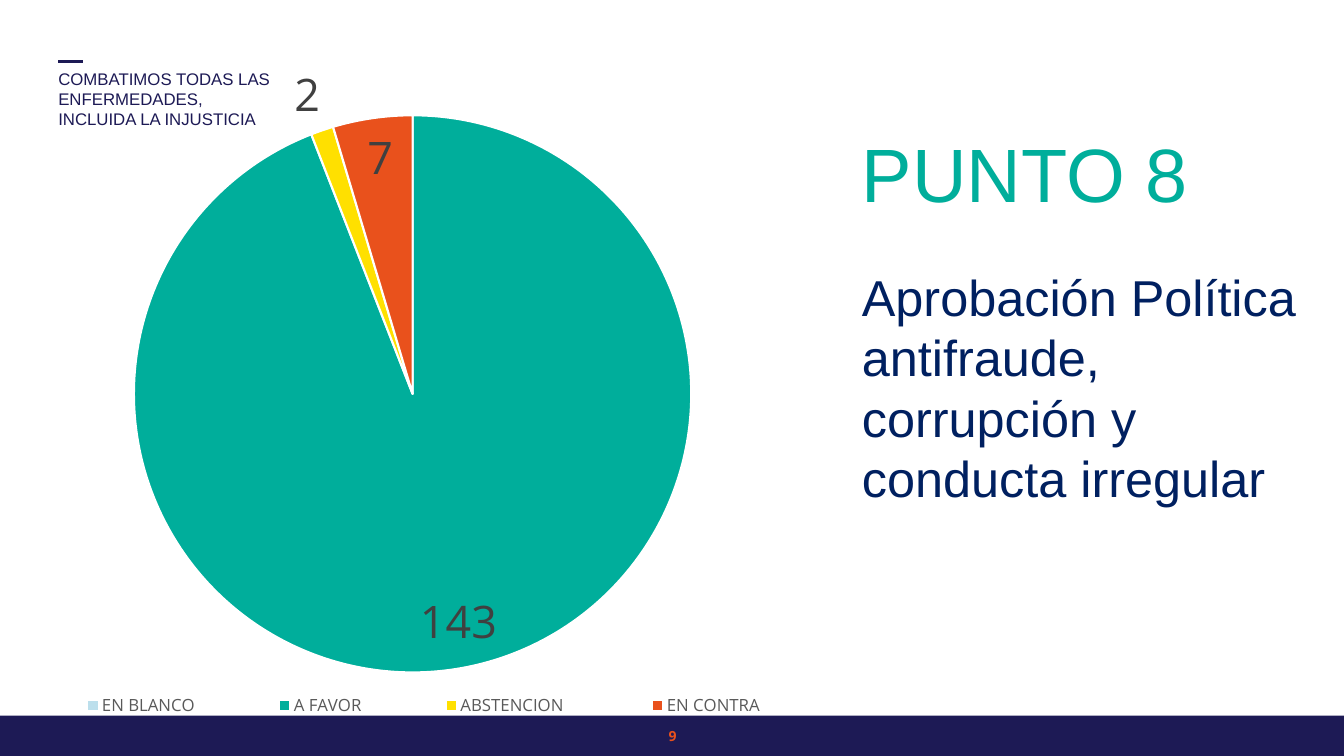
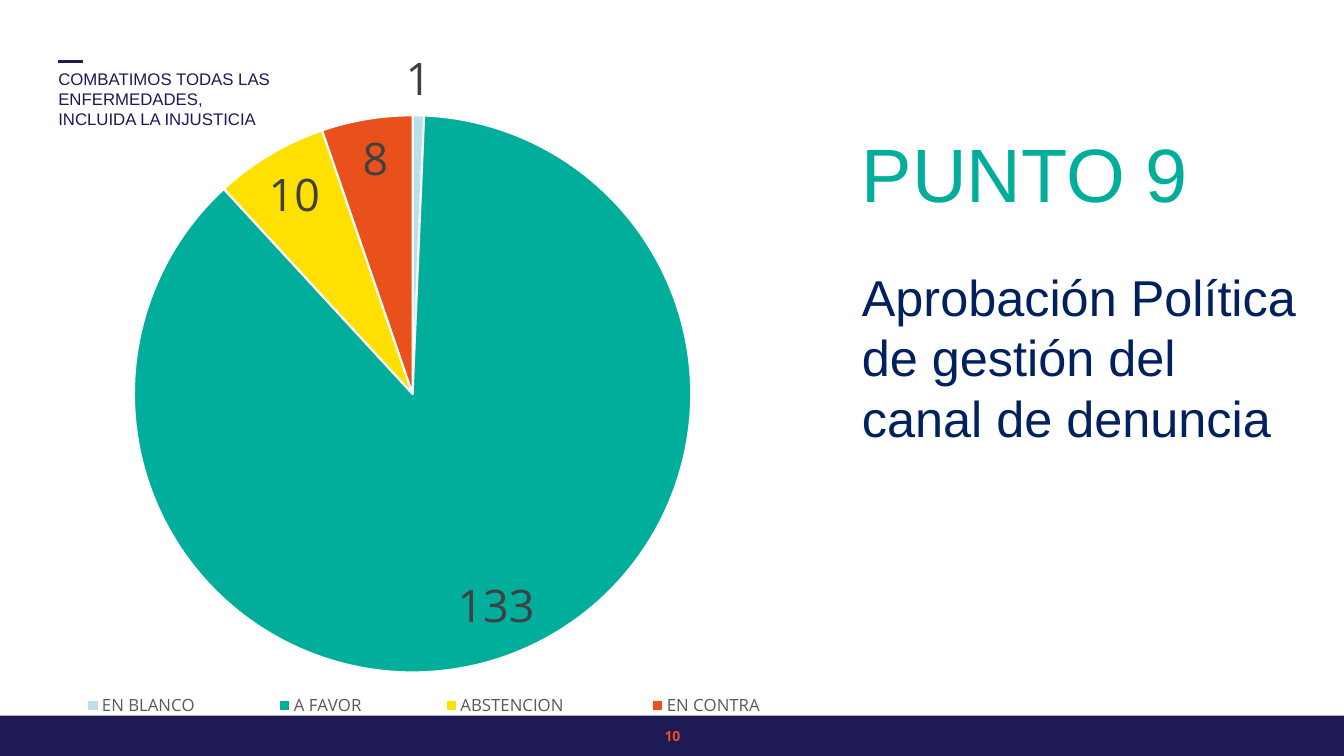
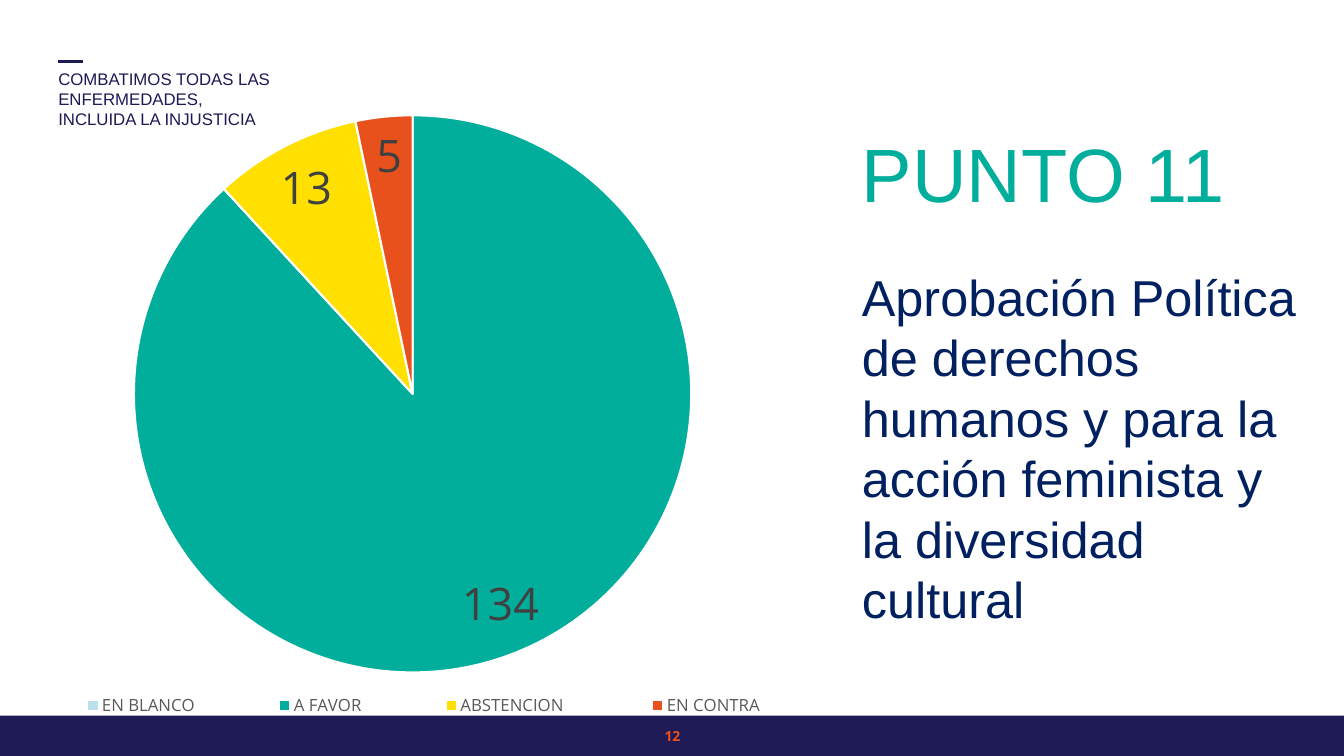
from lxml import etree
from pptx import Presentation
from pptx import util as u
from pptx.chart.data import CategoryChartData
from pptx.dml.color import RGBColor
from pptx.enum import chart as charts, shapes, text
from pptx.oxml import parse_xml
from pptx.oxml.ns import nsdecls, qn

COLORS = {
    "navy": "1D1A55", "body": "002060", "teal": "00AE9B", "orange": "E9511C",
    "yellow": "FFE000", "sky": "BCDFEC", "white": "FFFFFF",
    "label": "404040", "legend": "595959", "black": "000000",
}
HEADING_FONT, CHART_FONT = "Arial", "Open Sans"
MOTTO = "COMBATIMOS TODAS LAS ENFERMEDADES, \vINCLUIDA LA INJUSTICIA"
ANSWERS = [("EN BLANCO", "sky"), ("A FAVOR", "teal"),
           ("ABSTENCION ", "yellow"), ("EN CONTRA", "orange")]

# page number, title, subject, votes in the order of ANSWERS, subject height
VOTES = [
    (9, "PUNTO 8", "Aprobación Política antifraude, corrupción y conducta irregular",
     (0, 143, 2, 7), 2.52),
    (10, "PUNTO 9", "Aprobación Política de gestión del canal de denuncia",
     (1, 133, 10, 8), 2.52),
    (12, "PUNTO 11", "Aprobación Política de derechos humanos y para la acción "
     "feminista y la diversidad cultural", (0, 134, 13, 5), 3.74),
]
PLOT_AREA = {"x": 0.137, "y": 0.143, "w": 0.67, "h": 0.691}
LEGEND_AREA = {"x": 0.01, "y": 0.855, "w": 0.95, "h": 0.04}


def rgb(name):
    return RGBColor.from_string(COLORS[name])


def style(font, size, color, name, bold=False):
    font.size, font.name, font.bold = u.Pt(size), name, bold
    font.color.rgb = rgb(color)


def add_text(slide, box, content, size, color, font=HEADING_FONT, bold=False,
             align=text.PP_ALIGN.LEFT, anchor=text.MSO_ANCHOR.TOP):
    frame = slide.shapes.add_textbox(*map(u.Inches, box)).text_frame
    frame.word_wrap = True
    frame.vertical_anchor = anchor
    frame.text = content
    paragraph = frame.paragraphs[0]
    paragraph.alignment = align
    for run in paragraph.runs:
        style(run.font, size, color, font, bold)


def add_frame(slide, page):
    """Add the bottom band, motto, short rule and page number."""
    band = slide.shapes.add_shape(shapes.MSO_SHAPE.RECTANGLE, 0, u.Inches(7.1),
                                  u.Inches(13.33), u.Inches(0.4))
    band.shadow.inherit = False
    band.fill.solid()
    band.fill.fore_color.rgb = rgb("navy")
    band.line.fill.background()
    add_text(slide, (0.48, 0.63, 2.83, 0.71), MOTTO, 12, "navy")
    rule = slide.shapes.add_connector(
        shapes.MSO_CONNECTOR.STRAIGHT, *map(u.Inches, (0.58, 0.61, 0.82, 0.61)))
    rule.line.color.rgb = rgb("navy")
    rule.line.width = u.Pt(1.5)
    etree.SubElement(rule._element.spPr, qn("a:effectLst"))
    add_text(slide, (6.12, 7.17, 1.1, 0.27), str(page), 10, "orange", CHART_FONT,
             True, text.PP_ALIGN.CENTER, text.MSO_ANCHOR.MIDDLE)


def manual_layout(area, inner=False):
    target = '<c:layoutTarget val="inner"/>' if inner else ""
    modes = "".join(f'<c:{key}Mode val="edge"/>' for key in "xy")
    sizes = "".join(f'<c:{key} val="{value}"/>' for key, value in area.items())
    return parse_xml(f'<c:layout {nsdecls("c")}><c:manualLayout>{target}{modes}{sizes}'
                     '</c:manualLayout></c:layout>')


def set_layout(parent, layout, position):
    for old in parent.findall(qn("c:layout")):
        parent.remove(old)
    parent.insert(position, layout)


def add_pie(slide, votes):
    data = CategoryChartData()
    data.categories = [answer for answer, _ in ANSWERS]
    data.add_series("Series 1", votes)
    chart = slide.shapes.add_chart(charts.XL_CHART_TYPE.PIE, 0, 0, u.Inches(8.67),
                                   u.Inches(8), data).chart
    chart.has_title = False
    style(chart.font, 10, "black", CHART_FONT)

    chart.has_legend = True
    legend = chart.legend
    legend.position = charts.XL_LEGEND_POSITION.LEFT
    legend.include_in_layout = False
    style(legend.font, 12, "legend", CHART_FONT)
    set_layout(legend._element, manual_layout(LEGEND_AREA), 1)

    plot = chart.plots[0]
    plot.vary_by_categories = True
    set_layout(plot._element.getparent(), manual_layout(PLOT_AREA, inner=True), 0)
    series = plot.series[0]
    for index, (_, color) in enumerate(ANSWERS):
        wedge = series.points[index].format
        wedge.fill.solid()
        wedge.fill.fore_color.rgb = rgb(color)
        wedge.line.color.rgb = rgb("white")
        wedge.line.width = u.Pt(1.5)

    labels = series.data_labels
    labels.show_value = True
    labels.number_format = "#"  # leaves zero votes unlabelled
    labels.number_format_is_linked = False
    labels.position = charts.XL_LABEL_POSITION.BEST_FIT
    style(labels.font, 32, "label", CHART_FONT)


def main():
    presentation = Presentation()
    presentation.slide_width = u.Inches(13.33)
    presentation.slide_height = u.Inches(7.5)
    for page, title, subject, votes, height in VOTES:
        slide = presentation.slides.add_slide(presentation.slide_layouts[6])
        add_frame(slide, page)
        add_pie(slide, votes)
        add_text(slide, (8.45, 2.59, 4.63, height), subject, 36, "body")
        add_text(slide, (8.45, 1.21, 4.13, 1.01), title, 54, "teal")
    presentation.save("out.pptx")


if __name__ == "__main__":
    main()
